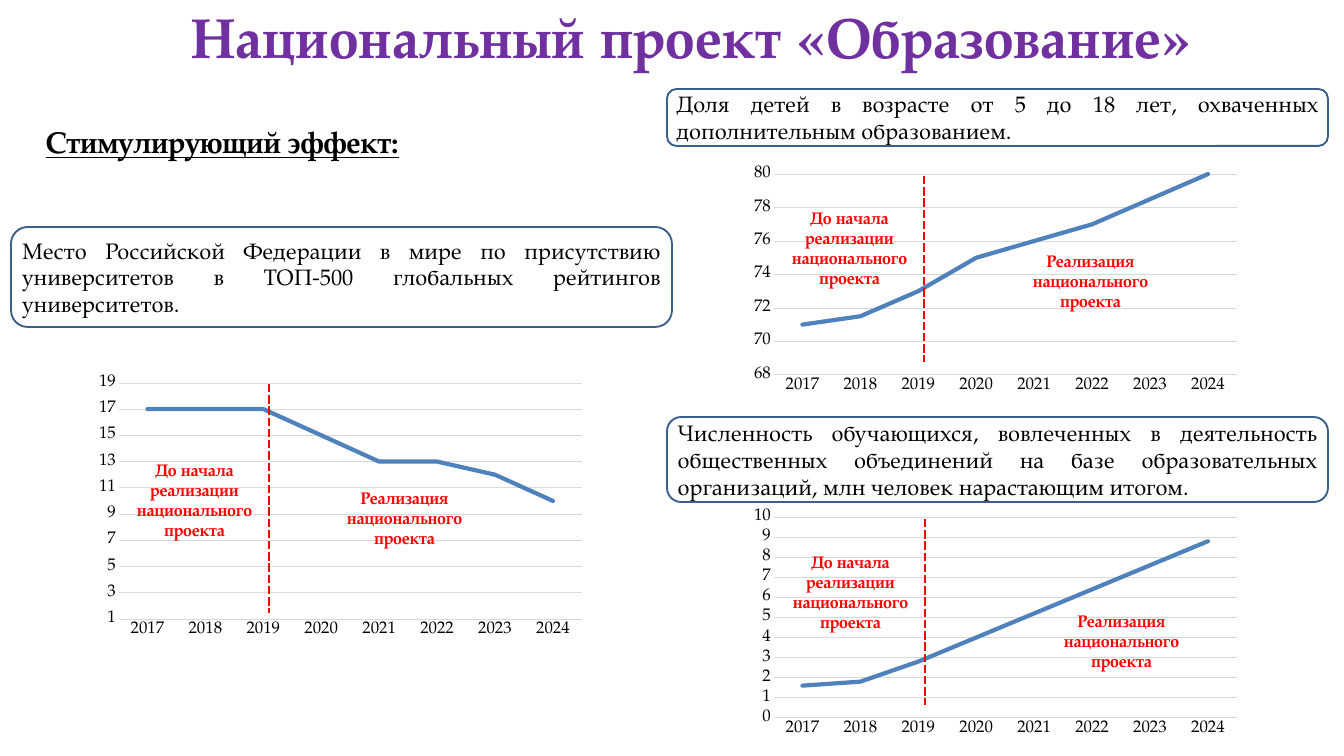
from lxml import etree
from pptx import Presentation, util as u
from pptx.chart.data import CategoryChartData
from pptx.dml.color import RGBColor
from pptx.enum import chart as ch, dml, shapes, text
from pptx.oxml.ns import qn

# Content: all places are left, top, width, height in px
FONT = "TeX Gyre Pagella"
COLORS = {"title": "7030A0", "ink": "000000", "accent": "FF0000",
          "frame": "3A5F8C", "grid": "D9D9D9", "series": "4F81BD"}
TITLE = "Национальный проект «Образование»"
HEADING = "Стимулирующий эффект:"
BEFORE = "До начала реализации национального проекта"
DURING = "Реализация национального проекта"
YEARS = [str(year) for year in range(2017, 2025)]
INDICATORS = [
    {"caption": "Место Российской Федерации в мире по присутствию университетов "
                "в ТОП-500 глобальных рейтингов университетов.",
     "frame": (11, 227, 661, 100), "plot": (89, 369, 503, 275),
     "values": (17, 17, 17, 15, 13, 13, 12, 10), "scale": (1, 19, 2),
     "start": (269, 384, 613), "before": (115, 456), "during": (325, 484)},
    {"caption": "Доля детей в возрасте от 5 до 18 лет, охваченных "
                "дополнительным образованием.",
     "frame": (667, 89, 661, 57), "plot": (744, 161, 503, 238),
     "values": (71, 71.5, 73, 75, 76, 77, 78.5, 80), "scale": (68, 80, 2),
     "start": (924, 176, 362), "before": (770, 204), "during": (1011, 247)},
    {"caption": "Численность обучающихся, вовлеченных в деятельность общественных "
                "объединений на базе образовательных организаций, млн человек "
                "нарастающим итогом.",
     "frame": (667, 417, 661, 85), "plot": (744, 504, 503, 238),
     "values": (1.6, 1.8, 2.8, 4, 5.2, 6.4, 7.6, 8.8), "scale": (0, 10, 1),
     "start": (925, 519, 705), "before": (771, 548), "during": (1042, 607)},
]
NOTE_WIDTH = 159
EMU_PER_PX = 914400 / 67.2


def px(*lengths):
    return [u.Emu(round(n * EMU_PER_PX)) for n in lengths]


def rgb(name):
    return RGBColor.from_string(COLORS[name])


def style_line(line, color, width):
    line.color.rgb = rgb(color)
    line.width = u.Pt(width)


def style_font(font, size, color="ink", bold=False):
    font.name, font.size, font.bold = FONT, u.Pt(size), bold
    font.color.rgb = rgb(color)


def write(words, place, frame=None, size=18, color="ink", bold=False, underline=False,
          align=text.PP_ALIGN.LEFT, wrap=True, inset=None, leading=None, tracking=None):
    """Put words in the given frame shape, or in a new text box at place."""
    holder = frame or slide.shapes.add_textbox(*px(*place))
    body = holder.text_frame
    body.word_wrap = wrap
    if inset is not None:
        body.margin_left = body.margin_top = body.margin_right = body.margin_bottom = inset
    paragraph = body.paragraphs[0]
    paragraph.alignment = align
    if leading:
        paragraph.line_spacing = u.Pt(leading)
    run = paragraph.add_run()
    run.text = words
    style_font(run.font, size, color, bold)
    if underline:
        run.font.underline = True
    if tracking:
        run._r.get_or_add_rPr().set("spc", str(tracking))


def add_caption(words, place):
    frame = slide.shapes.add_shape(shapes.MSO_SHAPE.ROUNDED_RECTANGLE, *px(*place))
    frame.shadow.inherit = False
    frame.fill.background()
    style_line(frame.line, "frame", 2)
    frame.text_frame.vertical_anchor = text.MSO_ANCHOR.MIDDLE
    write(words, place, frame=frame, size=24, align=text.PP_ALIGN.JUSTIFY)


def add_line_chart(values, scale, place):
    data = CategoryChartData()
    data.categories = YEARS
    data.add_series("Series 1", values)
    chart = slide.shapes.add_chart(ch.XL_CHART_TYPE.LINE, *px(*place), data).chart
    chart.has_legend = chart.has_title = False
    style_font(chart.font, 18)
    years, levels = chart.category_axis, chart.value_axis
    for axis in (years, levels):
        axis.major_tick_mark = axis.minor_tick_mark = ch.XL_TICK_MARK.NONE
        style_font(axis.tick_labels.font, 18)
    style_line(years.format.line, "grid", 0.75)
    levels.format.line.fill.background()
    levels.minimum_scale, levels.maximum_scale, levels.major_unit = scale
    levels.tick_labels.number_format = "General"
    levels.tick_labels.number_format_is_linked = False
    style_line(levels.major_gridlines.format.line, "grid", 0.75)
    chart.plots[0].vary_by_categories = False
    series = chart.plots[0].series[0]
    series.smooth = False
    series.marker.style = ch.XL_MARKER_STYLE.NONE
    style_line(series.format.line, "series", 4.5)
    series.format.line._get_or_add_ln().set("cap", "rnd")


def add_start_line(x, top, bottom):
    start = slide.shapes.add_connector(shapes.MSO_CONNECTOR.STRAIGHT,
                                       *px(x, top, x, bottom))
    style_line(start.line, "accent", 3)
    start.line.dash_style = dml.MSO_LINE.SQUARE_DOT
    etree.SubElement(start._element.spPr, qn("a:effectLst"))


deck = Presentation()
deck.slide_width, deck.slide_height = px(1344, 756)
slide = deck.slides.add_slide(deck.slide_layouts[6])

# Title and heading
write(HEADING, (39, 120, 405, 43), size=32, bold=True, underline=True, wrap=False)
write(TITLE, (50, 26, 1282, 48), size=60, color="title", bold=True,
      align=text.PP_ALIGN.CENTER, inset=0, leading=47.2, tracking=110)

# Captions lie behind the charts
for indicator in INDICATORS:
    add_caption(indicator["caption"], indicator["frame"])
for indicator in INDICATORS:
    add_line_chart(indicator["values"], indicator["scale"], indicator["plot"])

# Project start marks with the notes on both sides
for indicator in INDICATORS:
    add_start_line(*indicator["start"])
    for words, corner, height in ((BEFORE, indicator["before"], 88),
                                  (DURING, indicator["during"], 68)):
        write(words, (*corner, NOTE_WIDTH, height), color="accent", bold=True,
              align=text.PP_ALIGN.CENTER)

deck.save("out.pptx")
